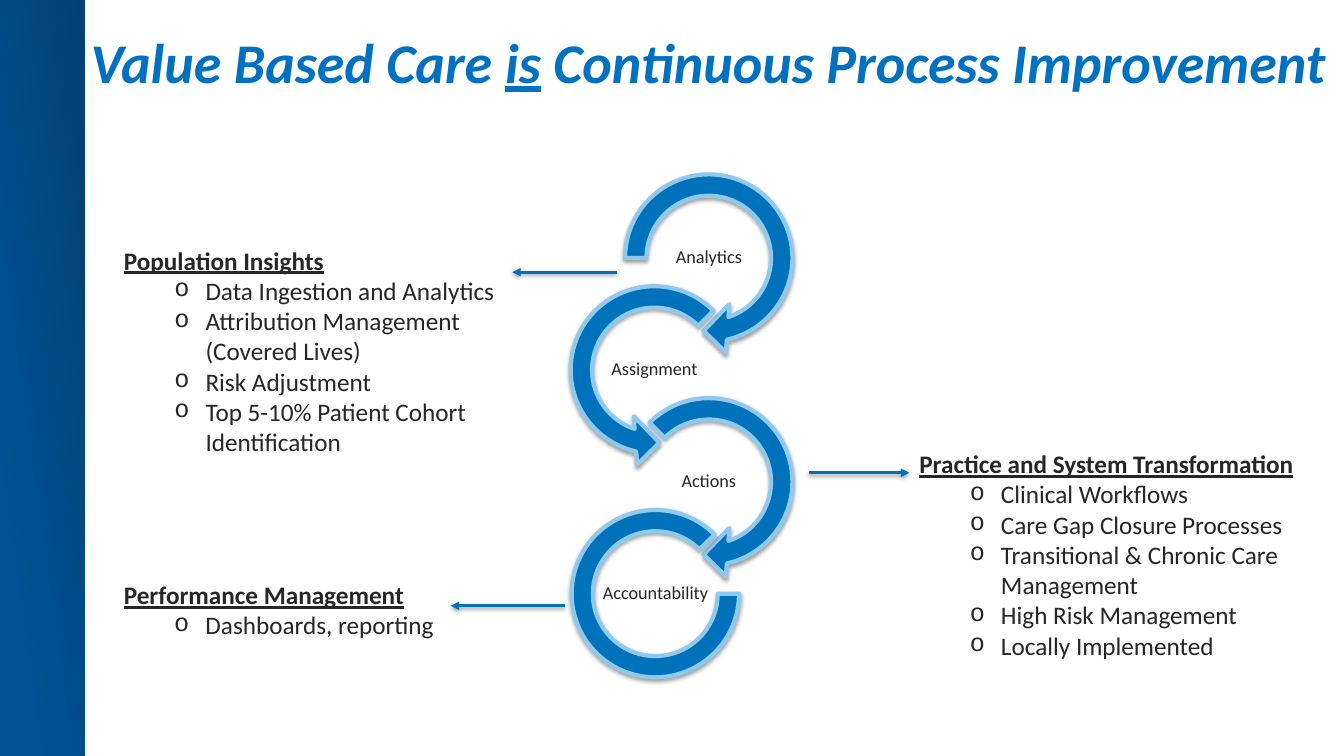
from lxml import etree
from pptx import Presentation
from pptx.dml.color import RGBColor as RGB
from pptx.enum.shapes import MSO_CONNECTOR as LINE, MSO_SHAPE as SHAPE
from pptx.enum.text import MSO_ANCHOR as ANCHOR, MSO_AUTO_SIZE as FIT, PP_ALIGN as ALIGN
from pptx.oxml.ns import qn
from pptx.util import Inches, Pt

HUE = {"title": "0070C0", "ring": "0072BC", "edge": "91C9ED", "text": "262626",
       "side": "005294", "dark": "004175", "shade": "000000"}
FONT = "Calibri"

TITLE = [("Value Based Care ", False), ("is", True),
         (" Continuous Process Improvement", False)]

RINGS = [
    ("Analytics", SHAPE.CIRCULAR_ARROW, (0.11, 11.423, 45, 108, 0.125)),
    ("Assignment", SHAPE.LEFT_CIRCULAR_ARROW, (0.11, 11.423, 63, 189, 0.125)),
    ("Actions", SHAPE.CIRCULAR_ARROW, (0.11, 11.423, 45, 135, 0.125)),
    ("Accountability", SHAPE.BLOCK_ARC, (0, 189, 0.127)),
]

LISTS = [
    ("Practice and System Transformation",
     ["Clinical Workflows", "Care Gap Closure Processes",
      "Transitional & Chronic Care Management", "High Risk Management",
      "Locally Implemented"],
     (9.02, 4.4, 4.8, 2.22), 0, True),
    ("Population Insights",
     ["Data Ingestion and Analytics", "Attribution Management (Covered Lives)",
      "Risk Adjustment", "Top 5-10% Patient Cohort Identification"],
     (0.63, 2.38, 4.71, 2.52), 1, True),
    ("Performance Management", ["Dashboards, reporting"],
     (1.13, 5.7, 3.36, 0.71), 0, False),
]

ARROWS = [(8.02, 9.02, 4.69), (6.12, 5.08, 2.7), (5.6, 4.47, 6.01)]


def color(key):
    return RGB.from_string(HUE[key])


def node(root, tag, **attrs):
    return etree.SubElement(root, qn(tag), attrs)


def shade(props):
    box = props.find(qn("a:effectLst"))
    if box is None:
        box = node(props, "a:effectLst")
    drop = node(box, "a:outerShdw", blurRad=str(Pt(3.1)), dist=str(Pt(1.6)),
                dir="5400000", rotWithShape="0")
    tint = node(drop, "a:srgbClr", val=HUE["shade"])
    node(tint, "a:alpha", val="38000")


def write(para, text, size=18, hue="text", bold=False, slant=False, under=False):
    run = para.add_run()
    run.text = text
    font = run.font
    font.name, font.size = FONT, Pt(size)
    font.bold, font.italic, font.underline = bold, slant, under
    font.color.rgb = color(hue)


def indent(para, left, hang=0.0, bullet=None):
    props = para._p.get_or_add_pPr()
    props.set("marL", str(Inches(left)))
    props.set("indent", str(Inches(hang)))
    if bullet:
        node(props, "a:buFont", typeface="Courier New")
        node(props, "a:buChar", char=bullet)


def frame(shape, pad=None, anchor=ANCHOR.TOP, wrap=True, fit=FIT.NONE):
    body = shape.text_frame
    body.word_wrap, body.auto_size, body.vertical_anchor = wrap, fit, anchor
    if pad is not None:
        body.margin_left = body.margin_right = Inches(pad)
        body.margin_top = body.margin_bottom = Inches(pad)
    return body


def add_title(slide):
    title = slide.shapes.title
    title.left, title.top = Inches(0.9), Inches(0.4)
    title.width, title.height = Inches(12.44), Inches(0.54)
    para = frame(title, pad=0, anchor=ANCHOR.BOTTOM).paragraphs[0]
    para.alignment = ALIGN.LEFT
    for text, under in TITLE:
        write(para, text, size=40, hue="title", bold=True, slant=True, under=under)


def add_side(slide):
    side = slide.shapes.add_shape(SHAPE.RECTANGLE, 0, 0, Inches(0.84), Inches(7.5))
    side.shadow.inherit = False
    side.line.fill.background()
    side.fill.gradient()
    side.fill.gradient_angle = 8
    stops = side.fill.gradient_stops
    for stop, spot, key in zip(stops, (0.18, 1), ("side", "dark")):
        stop.position = spot
        stop.color.rgb = color(key)


def add_ring(slide, rank, name, kind, turns):
    mid_x = 6.49 if rank % 2 else 7.03
    mid_y = 2.56 + 1.11 * rank
    size = 1.93
    if kind == SHAPE.BLOCK_ARC:
        size, mid_x = 1.66, 6.5
    ring = slide.shapes.add_shape(kind, Inches(mid_x - size / 2),
                                  Inches(mid_y - size / 2), Inches(size), Inches(size))
    for index, turn in enumerate(turns):
        ring.adjustments[index] = turn
    ring.fill.solid()
    ring.fill.fore_color.rgb = color("ring")
    ring.line.color.rgb = color("edge")
    ring.line.width = Pt(3)
    ring.shadow.inherit = False
    shade(ring._element.spPr)
    label = slide.shapes.add_textbox(Inches(mid_x - 0.54), Inches(mid_y - 0.27),
                                     Inches(1.08), Inches(0.54))
    para = frame(label, pad=0.01, anchor=ANCHOR.MIDDLE).paragraphs[0]
    para.alignment, para.line_spacing = ALIGN.CENTER, 0.9
    write(para, name, size=13)


def add_list(slide, head, items, place, level, wrap):
    box = slide.shapes.add_textbox(*map(Inches, place))
    body = frame(box, wrap=wrap, fit=FIT.SHAPE_TO_FIT_TEXT)
    para = body.paragraphs[0]
    para.level = level
    indent(para, 0.5 * level)
    write(para, head, bold=True, under=True)
    for item in items:
        para = body.add_paragraph()
        para.level = level + 1
        indent(para, 0.5 * level + 0.81, -0.31, "o")
        write(para, item)


def add_arrow(slide, start, end, row):
    arrow = slide.shapes.add_connector(LINE.STRAIGHT, Inches(start), Inches(row),
                                       Inches(end), Inches(row))
    arrow.line.color.rgb = color("ring")
    arrow.line.width = Pt(2)
    node(arrow.line._get_or_add_ln(), "a:tailEnd", type="triangle")
    shade(arrow._element.spPr)


def main():
    deck = Presentation()
    deck.slide_width, deck.slide_height = Inches(13.33), Inches(7.5)
    slide = deck.slides.add_slide(deck.slide_layouts[5])
    add_side(slide)
    add_title(slide)
    for rank, ring in enumerate(RINGS):
        add_ring(slide, rank, *ring)
    for block in LISTS:
        add_list(slide, *block)
    for arrow in ARROWS:
        add_arrow(slide, *arrow)
    deck.save("out.pptx")


if __name__ == "__main__":
    main()
